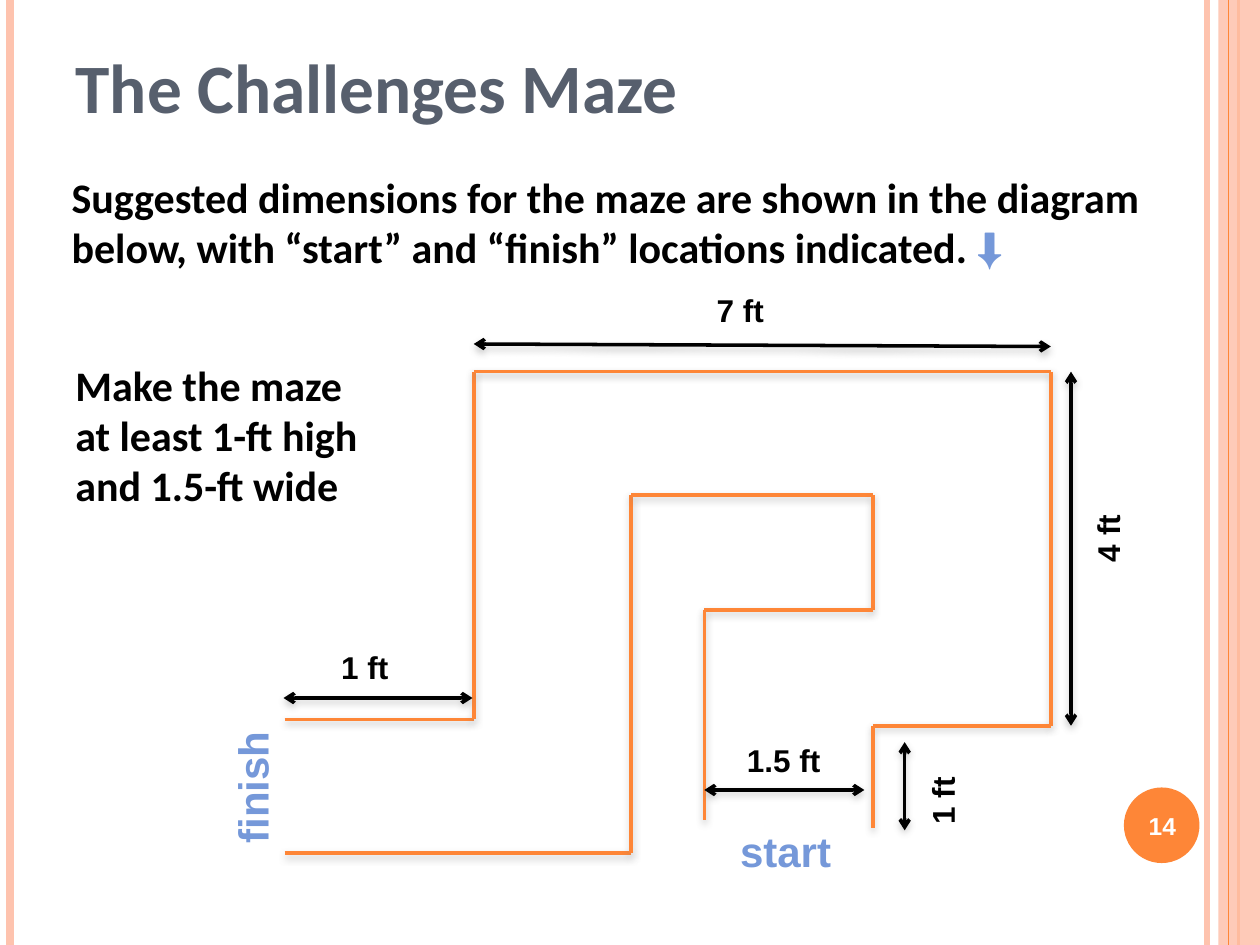
"""Build the slide that shows the challenge maze with its suggested dimensions."""
from itertools import pairwise

from pptx import Presentation
from pptx import util as u
from pptx.dml.color import RGBColor
from pptx.enum import shapes, text
from pptx.oxml import parse_xml
from pptx.oxml.ns import nsdecls

ORANGE, PEACH, BLUE, BLACK, SLATE, WHITE = (
    "FE8637", "FEC3AE", "7598D9", "000000", "575F6D", "FFFFFF")
LEFT, CENTER = text.PP_ALIGN.LEFT, text.PP_ALIGN.CENTER
SHADOW = ('<a:outerShdw blurRad="50800" dist="25400" dir="5400000" rotWithShape="0">'
          '<a:srgbClr val="808080"><a:alpha val="40000"/></a:srgbClr></a:outerShdw>')
colour = RGBColor.from_string

presentation = Presentation()
presentation.slide_width, presentation.slide_height = u.Inches(10), u.Inches(7.5)
slide = presentation.slides.add_slide(presentation.slide_layouts[5])


def add_line(start, end, color, width, effect="", arrows=False):
    """Draw a straight line, with a shadow and arrowheads at both ends if asked."""
    line = slide.shapes.add_connector(
        shapes.MSO_CONNECTOR.STRAIGHT, *map(u.Inches, (*start, *end)))
    line.line.color.rgb = colour(color)
    line.line.width = u.Pt(width)
    if arrows:
        for name in ("headEnd", "tailEnd"):
            line.line._get_or_add_ln().append(
                parse_xml(f'<a:{name} {nsdecls("a")} type="arrow"/>'))
    line._element.spPr.append(
        parse_xml(f'<a:effectLst {nsdecls("a")}>{effect}</a:effectLst>'))


def add_text(words, box, size, font, color, align=LEFT, rotation=0, wrap=True):
    """Add a bold text box and return it."""
    shape = slide.shapes.add_textbox(*map(u.Inches, box))
    shape.rotation = rotation
    shape.text_frame.word_wrap = wrap
    paragraph = shape.text_frame.paragraphs[0]
    paragraph.text = words
    paragraph.alignment = align
    paragraph.font.size = u.Pt(size)
    paragraph.font.name = font
    paragraph.font.bold = True
    paragraph.font.color.rgb = colour(color)
    return shape


for x, color, width in [(9.58, PEACH, 3), (0.08, PEACH, 4.5), (9.83, ORANGE, 1.5)]:
    add_line((x, 0), (x, 7.5), color, width)

for kind, box, color in [
    (shapes.MSO_SHAPE.RECTANGLE, (9.67, 0, 0.33, 7.5), PEACH),
    (shapes.MSO_SHAPE.OVAL, (8.92, 6.25, 0.6, 0.6), ORANGE),
]:
    shape = slide.shapes.add_shape(kind, *map(u.Inches, box))
    shape.shadow.inherit = False
    shape.fill.solid()
    shape.fill.fore_color.rgb = colour(color)
    shape.line.fill.background()
    if color == PEACH:
        shape.fill.fore_color._xFill[0].append(
            parse_xml(f'<a:alpha {nsdecls("a")} val="87000"/>'))
        add_line((9.75, 0), (9.75, 7.5), ORANGE, 0.75)

title = slide.shapes.title
title.left, title.top, title.width, title.height = map(u.Inches, (0.5, 0.3, 8.69, 0.76))
title.text_frame.text = "The Challenges Maze"
title.text_frame.vertical_anchor = text.MSO_ANCHOR.BOTTOM
heading = title.text_frame.paragraphs[0]
heading.alignment = LEFT
heading.font.size = u.Pt(39.6)
heading.font.name = "Calibri"
heading.font.bold = True
heading.font.color.rgb = colour(SLATE)

intro = add_text(
    "Suggested dimensions for the maze are shown in the diagram below, "
    "with “start” and “finish” locations indicated. ",
    (0.47, 1.31, 8.87, 1.1), 24, "Calibri", BLACK)
arrow = intro.text_frame.paragraphs[0].add_run()
arrow.text = "⬇"
arrow.font.color.rgb = colour(BLUE)
add_text("Make the maze at least 1-ft high and 1.5-ft wide",
         (0.5, 2.8, 2.53, 1.31), 24, "Calibri", BLACK)
number = add_text("14", (8.89, 6.27, 0.67, 0.57), 14, "Arial", WHITE, CENTER)
number.text_frame.vertical_anchor = text.MSO_ANCHOR.MIDDLE

outer_wall = [(2.26, 5.71), (3.76, 5.71), (3.76, 2.95), (8.34, 2.95),
              (8.34, 5.76), (6.93, 5.76), (6.93, 6.57)]
inner_wall = [(2.26, 6.77), (5.01, 6.77), (5.01, 3.93), (6.93, 3.93),
              (6.93, 4.84), (5.59, 4.84), (5.59, 6.51)]
for wall in (outer_wall, inner_wall):
    for start, end in pairwise(wall):
        add_line(start, end, ORANGE, 2, SHADOW)

for words, box, rotation, start, end in [
    ("7 ft", (5.59, 2.26, 0.74, 0.4), 0, (3.76, 2.73), (8.34, 2.75)),
    ("4 ft", (8.47, 4.04, 0.64, 0.4), 270, (8.5, 2.95), (8.5, 5.76)),
    ("1 ft", (2.61, 5.09, 0.63, 0.4), 0, (2.25, 5.54), (3.75, 5.54)),
    ("1 ft", (7.11, 6.07, 0.74, 0.4), 270, (7.18, 5.89), (7.18, 6.59)),
    ("1.5 ft", (5.83, 5.83, 0.79, 0.4), 0, (5.59, 6.27), (6.86, 6.27)),
]:
    add_line(start, end, BLACK, 2, SHADOW, arrows=True)
    add_text(words, box, 18, "Arial", BLACK, rotation=rotation, wrap=words != "1.5 ft")

add_text("start", (5.67, 6.5, 1.13, 0.5), 24, "Arial", BLUE, CENTER)
add_text("finish", (1.42, 6, 1.16, 0.5), 24, "Arial", BLUE, CENTER, 270)

presentation.save("out.pptx")
